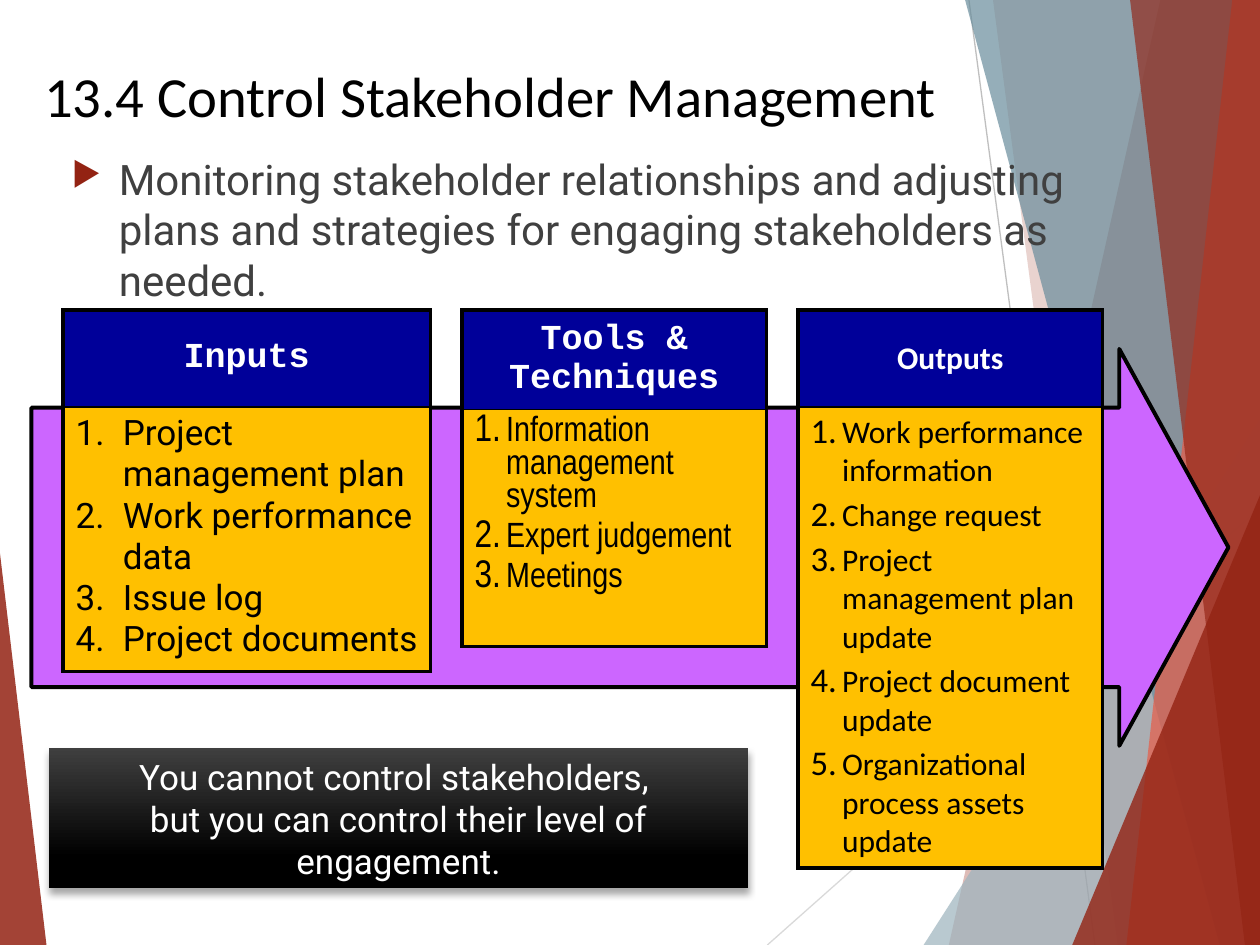
from lxml import etree
from pptx import Presentation
from pptx.dml.color import RGBColor
from pptx.enum import shapes, text
from pptx.oxml.ns import qn
from pptx.util import Pt

W, H = 720, 540


def color(hex_value):
    return RGBColor.from_string(hex_value)


def sub(parent, tag, **attrs):
    return etree.SubElement(parent, qn(tag), {k: str(v) for k, v in attrs.items()})


def add_run(p, words, size, font, hex_value, bold=False):
    r = p.add_run()
    r.text = words
    r.font.size, r.font.name, r.font.bold = Pt(size), font, bold
    r.font.color.rgb = color(hex_value)


def set_bullet(p, indent, percent, hex_value=None, char=None):
    """Hanging bullet: a character if given, otherwise a number."""
    pPr = p._p.get_or_add_pPr()
    pPr.set("marL", str(Pt(indent)))
    pPr.set("indent", str(-Pt(indent)))
    if hex_value:
        sub(sub(pPr, "a:buClr"), "a:srgbClr", val=hex_value)
    sub(pPr, "a:buSzPct", val=percent * 1000)
    if char:
        sub(pPr, "a:buChar", char=char)
    else:
        sub(pPr, "a:buAutoNum", type="arabicPeriod")


def style_shape(sp, fill, opacity=100, line=None, width=2.25):
    sp.shadow.inherit = False
    sp.fill.solid()
    sp.fill.fore_color.rgb = color(fill)
    if opacity < 100:
        srgb = sp._element.spPr.find(qn("a:solidFill")).find(qn("a:srgbClr"))
        sub(srgb, "a:alpha", val=opacity * 1000)
    if line:
        sp.line.color.rgb = color(line)
        sp.line.width = Pt(width)
    else:
        sp.line.fill.background()


# Backdrop of thin lines and translucent facets
def add_thin_line(s, x1, y1, x2, y2, hex_value):
    line = s.shapes.add_connector(shapes.MSO_CONNECTOR.STRAIGHT, Pt(x1), Pt(y1), Pt(x2), Pt(y2))
    line.line.color.rgb = color(hex_value)
    line.line.width = Pt(0.75)
    sub(line._element.spPr, "a:effectLst")


def add_facet(s, top_x, bottom_x, fill, opacity):
    """Full-height facet between a slanted edge and the right slide edge."""
    builder = s.shapes.build_freeform(Pt(top_x), 0)
    corners = [(W, 0), (W, H), (bottom_x, H)]
    builder.add_line_segments([(Pt(x), Pt(y)) for x, y in corners], close=True)
    style_shape(builder.convert_to_shape(), fill, opacity)


def add_triangle(s, box, apex, fill, opacity):
    sp = s.shapes.add_shape(shapes.MSO_SHAPE.ISOSCELES_TRIANGLE, *map(Pt, box))
    sp.adjustments[0] = apex
    style_shape(sp, fill, opacity)


def add_backdrop(s):
    add_thin_line(s, 553.7, 0, 625.7, H, "BFBFBF")
    add_thin_line(s, W, 290.2, 438.5, H, "D9D9D9")
    add_facet(s, 663.1, 542.2, "932313", 30)
    add_facet(s, 567.4, 638.6, "932313", 20)
    add_triangle(s, (527.8, 239.8, 192.2, 300.2), 1, "9EB5BF", 72)
    add_facet(s, 551.5, 697, "698D9C", 70)
    add_facet(s, 704.2, 643.7, "E75C48", 70)
    add_facet(s, 645.8, 711.4, "932313", 65)
    add_triangle(s, (612.7, 283, 107.3, 257), 1, "932313", 80)
    add_triangle(s, (0, 316.1, 26.6, 223.9), 0, "932313", 85)


def set_title(s, box, words):
    title = s.shapes.title
    title.left, title.top, title.width, title.height = map(Pt, box)
    tf = title.text_frame
    tf.auto_size = text.MSO_AUTO_SIZE.NONE
    tf.vertical_anchor = text.MSO_ANCHOR.TOP
    p = tf.paragraphs[0]
    p.alignment = text.PP_ALIGN.LEFT
    add_run(p, words, 32.4, "Calibri", "000000")


def add_definition(s, box, words):
    tf = s.shapes.add_textbox(*map(Pt, box)).text_frame
    tf.word_wrap = True
    p = tf.paragraphs[0]
    set_bullet(p, 27, 80, "932313", "▶")
    add_run(p, words, 24, "Roboto", "404040")


def add_process_arrow(s, box):
    sp = s.shapes.add_shape(shapes.MSO_SHAPE.RIGHT_ARROW, *map(Pt, box))
    sp.adjustments[0], sp.adjustments[1] = 0.704, 0.275
    style_shape(sp, "CC66FF", line="000000")


def style_cell(cell, fill, top, bottom):
    tcPr = cell._tc.get_or_add_tcPr()
    for side, width in (("L", 2.25), ("R", 2.25), ("T", top), ("B", bottom)):
        ln = sub(tcPr, f"a:ln{side}", w=Pt(width))
        sub(sub(ln, "a:solidFill"), "a:srgbClr", val="000000")
    cell.fill.solid()
    cell.fill.fore_color.rgb = color(fill)


def add_process_table(s, box, head_height, heading, head_font, items, font, size,
                      indent=18, gap=0, percent=110):
    table = s.shapes.add_table(2, 1, *map(Pt, box)).table
    table.horz_banding = False
    table.rows[0].height = Pt(head_height)
    table.rows[1].height = Pt(box[3] - head_height)
    head, body = table.cell(0, 0), table.cell(1, 0)
    style_cell(head, "000099", 2.25, 1)
    style_cell(body, "FFC000", 1, 2.25)

    head.vertical_anchor = text.MSO_ANCHOR.MIDDLE
    p = head.text_frame.paragraphs[0]
    p.alignment = text.PP_ALIGN.CENTER
    add_run(p, heading, size, head_font, "FFFFFF", True)

    tf = body.text_frame
    for i, item in enumerate(items):
        p = tf.add_paragraph() if i else tf.paragraphs[0]
        p.space_before = Pt(gap)
        set_bullet(p, indent, percent)
        add_run(p, item, size, font, "000000")


def add_callout(s, box, lines):
    sp = s.shapes.add_shape(shapes.MSO_SHAPE.RECTANGLE, *map(Pt, box))
    sp.line.fill.background()
    sp.fill.gradient()
    sp.fill.gradient_angle = 270
    for stop, (position, shade) in zip(sp.fill.gradient_stops, [(0, "3F3F3F"), (0.78, "000000")]):
        stop.position = position
        stop.color.rgb = color(shade)
    # Soft shadow below the box
    effects = sub(sp._element.spPr, "a:effectLst")
    shadow = sub(effects, "a:outerShdw", blurRad=Pt(4), dist=Pt(3), dir=5400000, rotWithShape=0)
    sub(sub(shadow, "a:srgbClr", val="000000"), "a:alpha", val=35000)

    tf = sp.text_frame
    tf.word_wrap = True
    tf.vertical_anchor = text.MSO_ANCHOR.MIDDLE
    for i, line in enumerate(lines):
        p = tf.add_paragraph() if i else tf.paragraphs[0]
        p.alignment = text.PP_ALIGN.CENTER
        add_run(p, line, 20, "Roboto", "FFFFFF")


def main():
    prs = Presentation()
    prs.slide_width, prs.slide_height = Pt(W), Pt(H)
    s = prs.slides.add_slide(prs.slide_layouts[5])

    add_backdrop(s)
    add_process_arrow(s, (18, 199.4, 684, 226.8))
    set_title(s, (18, 31, 600, 30), "13.4 Control Stakeholder Management")
    add_definition(s, (33.8, 84.2, 617.8, 108),
                   "Monitoring stakeholder relationships and adjusting plans and "
                   "strategies for engaging stakeholders as needed.")

    # Inputs, tools and outputs
    add_process_table(s, (36, 177.1, 210, 204), 55.4, "Inputs", "Courier New",
                      ["Project management plan", "Work performance data",
                       "Issue log", "Project documents"],
                      "Roboto", 20, indent=27, percent=100)
    add_process_table(s, (264, 177.1, 174, 166.5), 56.9, "Tools & Techniques", "Courier New",
                      ["Information management system", "Expert judgement", "Meetings"],
                      "Arial Narrow", 20, gap=4)
    add_process_table(s, (456, 177.1, 174, 319), 55.4, "Outputs", "Calibri",
                      ["Work performance information", "Change request",
                       "Project management plan update", "Project document update",
                       "Organizational process assets update"],
                      "Calibri", 18, gap=3.6)

    add_callout(s, (28, 427.5, 399.5, 80),
                ["You cannot control stakeholders, ",
                 "but you can control their level of engagement."])
    prs.save("out.pptx")


if __name__ == "__main__":
    main()
